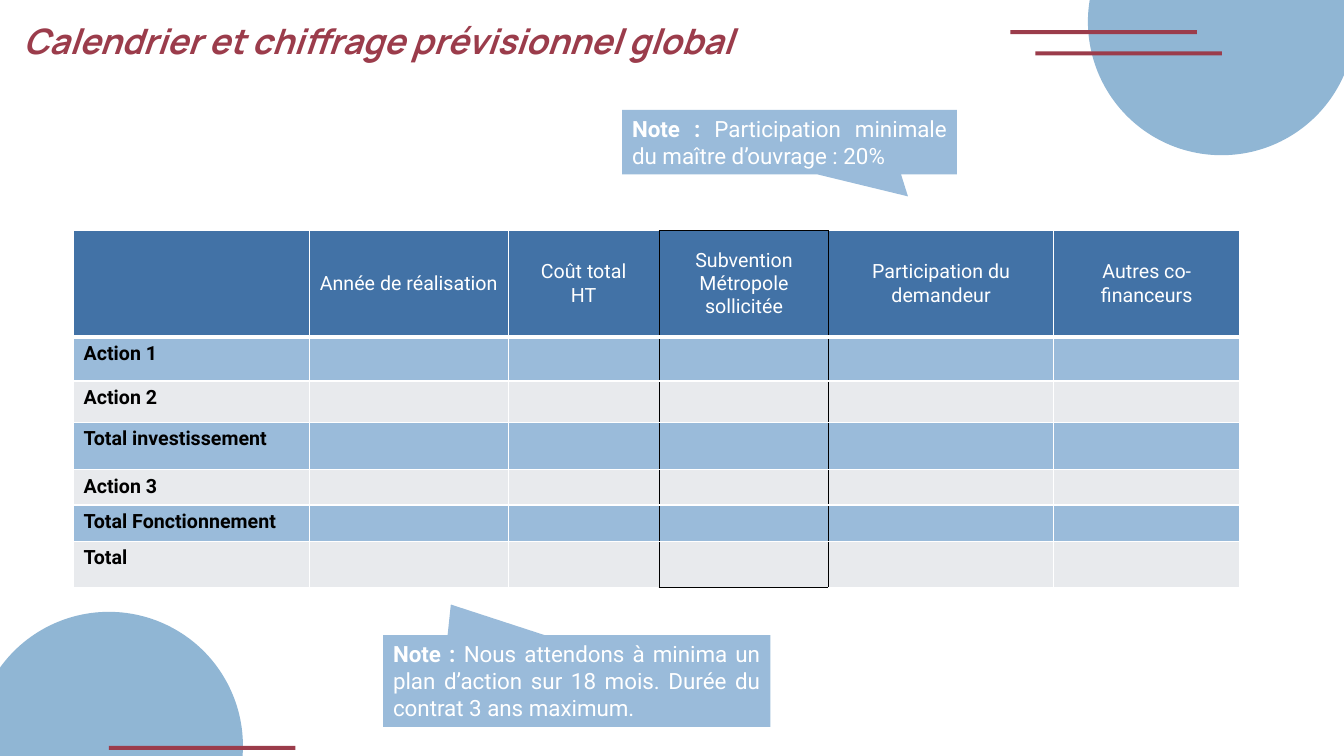
from dataclasses import dataclass

from lxml import etree
from pptx import Presentation
from pptx.dml.color import RGBColor
from pptx.enum.shapes import MSO_SHAPE
from pptx.enum.text import MSO_ANCHOR, MSO_AUTO_SIZE, PP_ALIGN
from pptx.oxml.ns import qn
from pptx.util import Inches, Pt

OVAL, RECTANGLE = MSO_SHAPE.OVAL, MSO_SHAPE.RECTANGLE
CALLOUT = MSO_SHAPE.RECTANGULAR_CALLOUT
TOP, MIDDLE = MSO_ANCHOR.TOP, MSO_ANCHOR.MIDDLE
LEFT, CENTER, JUSTIFY = PP_ALIGN.LEFT, PP_ALIGN.CENTER, PP_ALIGN.JUSTIFY
FIT_SHAPE = MSO_AUTO_SIZE.SHAPE_TO_FIT_TEXT


@dataclass(frozen=True)
class Theme:
    white: str = "FFFFFF"
    black: str = "000000"
    red: str = "9B3C4B"
    disc: str = "90B6D4"
    header: str = "4272A6"
    blue: str = "9ABBDA"
    grey: str = "E8EAED"
    title_font: str = "Manrope"
    body_font: str = "Roboto"
    title_size: int = 25
    note_size: int = 16
    table_size: int = 14


THEME = Theme()

HEADINGS = ["", "Année de réalisation", "Coût total\nHT",
            "Subvention Métropole sollicitée", "Participation du demandeur",
            "Autres co-financeurs"]
BUDGET_LINES = ["Action 1", "Action 2", "Total investissement", "Action 3",
                "Total Fonctionnement", "Total"]
COLUMN_WIDTHS = [2.34, 1.97, 1.5, 1.68, 2.23, 1.85]
ROW_HEIGHTS = [1.05, 0.44, 0.41, 0.47, 0.35, 0.36, 0.46]
GRANT_COLUMN = HEADINGS.index("Subvention Métropole sollicitée")


def style(paragraph, font, size, color, align=LEFT, bold=None):
    paragraph.alignment = align
    paragraph.font.name = font
    paragraph.font.size = Pt(size)
    paragraph.font.bold = bold
    paragraph.font.color.rgb = RGBColor.from_string(color)


def add_flat_shape(slide, kind, box, color):
    shape = slide.shapes.add_shape(kind, *map(Inches, box))
    shape.shadow.inherit = False
    shape.fill.solid()
    shape.fill.fore_color.rgb = RGBColor.from_string(color)
    shape.line.fill.background()
    return shape


def add_corner(slide, box, bar_offsets):
    """Disc with red bars, each offset from the disc's corner."""
    left, top = box[:2]
    add_flat_shape(slide, OVAL, box, THEME.disc)
    for dx, dy in bar_offsets:
        add_flat_shape(slide, RECTANGLE, (left + dx, top + dy, 1.85, 0.04), THEME.red)


def add_title(slide, box, text):
    frame = slide.shapes.add_textbox(*map(Inches, box)).text_frame
    frame.word_wrap = True
    frame.auto_size = FIT_SHAPE
    frame.margin_left = frame.margin_right = frame.margin_top = frame.margin_bottom = 0
    title = frame.paragraphs[0]
    title.text = text
    style(title, THEME.title_font, THEME.title_size, THEME.red, bold=True)
    title.font.italic = True


def add_note(slide, box, pointer, text):
    note = add_flat_shape(slide, CALLOUT, box, THEME.blue)
    note.adjustments[0], note.adjustments[1] = pointer
    frame = note.text_frame
    frame.word_wrap = True
    frame.auto_size = FIT_SHAPE
    frame.vertical_anchor = TOP
    paragraph = frame.paragraphs[0]
    style(paragraph, THEME.body_font, THEME.note_size, THEME.white, JUSTIFY)
    for words, bold in (("Note : ", True), (text, False)):
        run = paragraph.add_run()
        run.text = words
        run.font.bold = bold


def set_borders(cell, borders):
    """Cell borders as (colour, points), in left, right, top, bottom order."""
    properties = cell._tc.get_or_add_tcPr()
    for position, (side, (color, points)) in enumerate(zip("LRTB", borders)):
        line = etree.Element(qn(f"a:ln{side}"), w=str(Pt(points)))
        fill = etree.SubElement(line, qn("a:solidFill"))
        etree.SubElement(fill, qn("a:srgbClr"), val=color)
        properties.insert(position, line)


def cell_borders(row, column):
    """White grid, with a black frame around the grant column."""
    in_grant = column == GRANT_COLUMN
    last_row = len(BUDGET_LINES)

    def edge(framed, points=1):
        return (THEME.black if framed else THEME.white, points)

    return (edge(column in (GRANT_COLUMN, GRANT_COLUMN + 1)),
            edge(column in (GRANT_COLUMN - 1, GRANT_COLUMN)),
            edge(in_grant and row == 0),
            edge(in_grant and row == last_row, 3 if row == 0 else 1))


def add_budget_table(slide, box):
    table = slide.shapes.add_table(len(ROW_HEIGHTS), len(COLUMN_WIDTHS),
                                   *map(Inches, box)).table
    for column, width in zip(table.columns, COLUMN_WIDTHS):
        column.width = Inches(width)
    rows = [HEADINGS] + [[name] + [""] * (len(HEADINGS) - 1) for name in BUDGET_LINES]
    for r, texts in enumerate(rows):
        table.rows[r].height = Inches(ROW_HEIGHTS[r])
        is_header = r == 0
        fill = THEME.header if is_header else (THEME.blue if r % 2 else THEME.grey)
        for c, text in enumerate(texts):
            cell = table.cell(r, c)
            cell.text = text
            cell.vertical_anchor = MIDDLE if is_header else TOP
            cell.fill.solid()
            cell.fill.fore_color.rgb = RGBColor.from_string(fill)
            for paragraph in cell.text_frame.paragraphs:
                style(paragraph, THEME.body_font, THEME.table_size,
                      THEME.white if is_header else THEME.black,
                      CENTER if is_header else LEFT, bold=not is_header)
            set_borders(cell, cell_borders(r, c))


def main():
    deck = Presentation()
    deck.slide_width, deck.slide_height = Inches(13.33), Inches(7.5)
    slide = deck.slides.add_slide(deck.slide_layouts[6])

    # Corner decorations
    add_corner(slide, (-0.25, 6.07, 2.66, 2.66), [(1.33, 1.33)])
    add_corner(slide, (10.79, -1.11, 2.65, 2.65), [(-0.77, 1.41), (-0.52, 1.62)])

    # Title and budget
    add_title(slide, (0.23, 0.19, 11, 0.42), "Calendrier et chiffrage prévisionnel global")
    add_budget_table(slide, (0.73, 2.29, sum(COLUMN_WIDTHS), sum(ROW_HEIGHTS)))

    # Notes pointing at the table
    add_note(slide, (3.8, 6.3, 3.84, 0.91), (-0.325, -0.833),
             "Nous attendons à minima un plan d’action sur 18 mois. "
             "Durée du contrat 3 ans maximum.")
    add_note(slide, (6.17, 1.09, 3.32, 0.64), (0.354, 0.841),
             "Participation minimale du maître d’ouvrage : 20%")

    deck.save("out.pptx")


if __name__ == "__main__":
    main()
